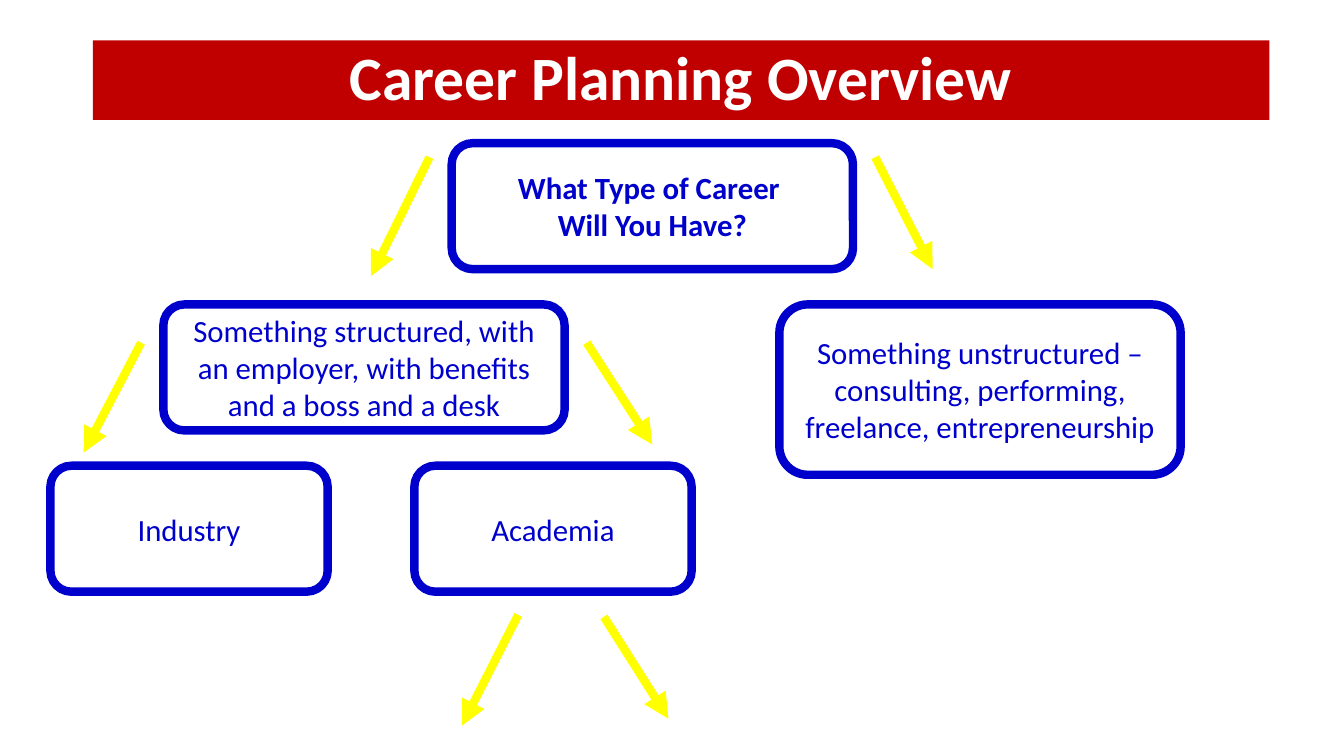
from lxml import etree
from pptx import Presentation
from pptx.dml.color import RGBColor
from pptx.enum.shapes import MSO_CONNECTOR as Connector, MSO_SHAPE as Shape
from pptx.enum.text import MSO_ANCHOR as Anchor, MSO_AUTO_SIZE as AutoSize, PP_ALIGN as Align
from pptx.oxml.ns import qn
from pptx.util import Inches, Pt

COLORS = {"banner": "C00000", "white": "FFFFFF", "blue": "0000CC", "arrow": "FFFF00"}
FONT = "Calibri"
STROKE = Pt(6)


def color(name):
    return RGBColor.from_string(COLORS[name])


def write(paragraph, text, size, ink, bold=False):
    paragraph.alignment = Align.CENTER
    run = paragraph.add_run()
    run.text = text
    run.font.name = FONT
    run.font.size = Pt(size)
    run.font.bold = bold
    run.font.color.rgb = color(ink)


# Red banner across the top
def add_banner(slide, box, text):
    banner = slide.shapes.title
    banner.left, banner.top, banner.width, banner.height = map(Inches, box)
    banner.fill.solid()
    banner.fill.fore_color.rgb = color("banner")
    frame = banner.text_frame
    frame.auto_size = AutoSize.NONE
    frame.vertical_anchor = Anchor.MIDDLE
    frame.paragraphs[0].line_spacing = 0.9
    write(frame.paragraphs[0], text, 44, "white", bold=True)


# Rounded box holding one career choice
def add_choice(slide, box, lines, bold=False):
    choice = slide.shapes.add_shape(Shape.ROUNDED_RECTANGLE, *map(Inches, box))
    choice.shadow.inherit = False
    choice.fill.solid()
    choice.fill.fore_color.rgb = color("white")
    choice.line.color.rgb = color("blue")
    choice.line.width = STROKE
    frame = choice.text_frame
    frame.word_wrap = True
    frame.vertical_anchor = Anchor.MIDDLE
    for index, line in enumerate(lines):
        paragraph = frame.add_paragraph() if index else frame.paragraphs[0]
        write(paragraph, line, 22, "blue", bold)


# Arrow from a start point, running by a horizontal and vertical distance
def add_arrow(slide, x, y, run, drop):
    ends = map(Inches, (x, y, x + run, y + drop))
    arrow = slide.shapes.add_connector(Connector.STRAIGHT, *ends)
    arrow.line.color.rgb = color("arrow")
    arrow.line.width = STROKE
    etree.SubElement(arrow.line._get_or_add_ln(), qn("a:tailEnd"), type="triangle")
    etree.SubElement(arrow._element.spPr, qn("a:effectLst"))


# Pair of arrows; each start is an offset from the box's top left corner
def add_fork(slide, box, *arrows):
    left, top = box[:2]
    for dx, dy, run, drop in arrows:
        add_arrow(slide, left + dx, top + dy, run, drop)


def add_career_slide(deck):
    slide = deck.slides.add_slide(deck.slide_layouts[5])
    add_banner(slide, (0.92, 0.4, 11.67, 0.79), "Career Planning Overview")

    # Three levels of choices
    wide, narrow, height = 3.98, 2.75, 1.25
    second_row, third_row = 3.02, 4.62
    question = (4.48, 1.42, wide, height)
    structured = (1.62, second_row, wide, height)
    unstructured = (7.73, second_row, wide, 1.69)
    industry = (0.5, third_row, narrow, height)
    academia = (4.11, third_row, narrow, height)

    add_choice(slide, question, ["What Type of Career ", "Will You Have?"], bold=True)
    add_choice(slide, structured,
               ["Something structured, with an employer, with benefits and a boss and a desk"])
    add_choice(slide, unstructured,
               ["Something unstructured – consulting, performing, freelance, entrepreneurship"])
    add_choice(slide, industry, ["Industry"])
    add_choice(slide, academia, ["Academia"])

    # Arrows leading down from each branching choice
    gap = 0.22
    add_fork(slide, question, (-gap, 0.14, -0.58, 1.18), (wide + gap, 0.14, 0.57, 1.11))
    add_fork(slide, structured, (-gap, 0.38, -0.57, 1.09), (wide + gap, 0.38, 0.65, 1.01))
    add_fork(slide, academia, (1.03, height + 0.23, -0.56, 1.1),
             (1.88, height + 0.25, 0.64, 1.01))


def main():
    deck = Presentation()
    deck.slide_width, deck.slide_height = Inches(13.33), Inches(7.5)
    add_career_slide(deck)
    deck.save("out.pptx")


if __name__ == "__main__":
    main()
